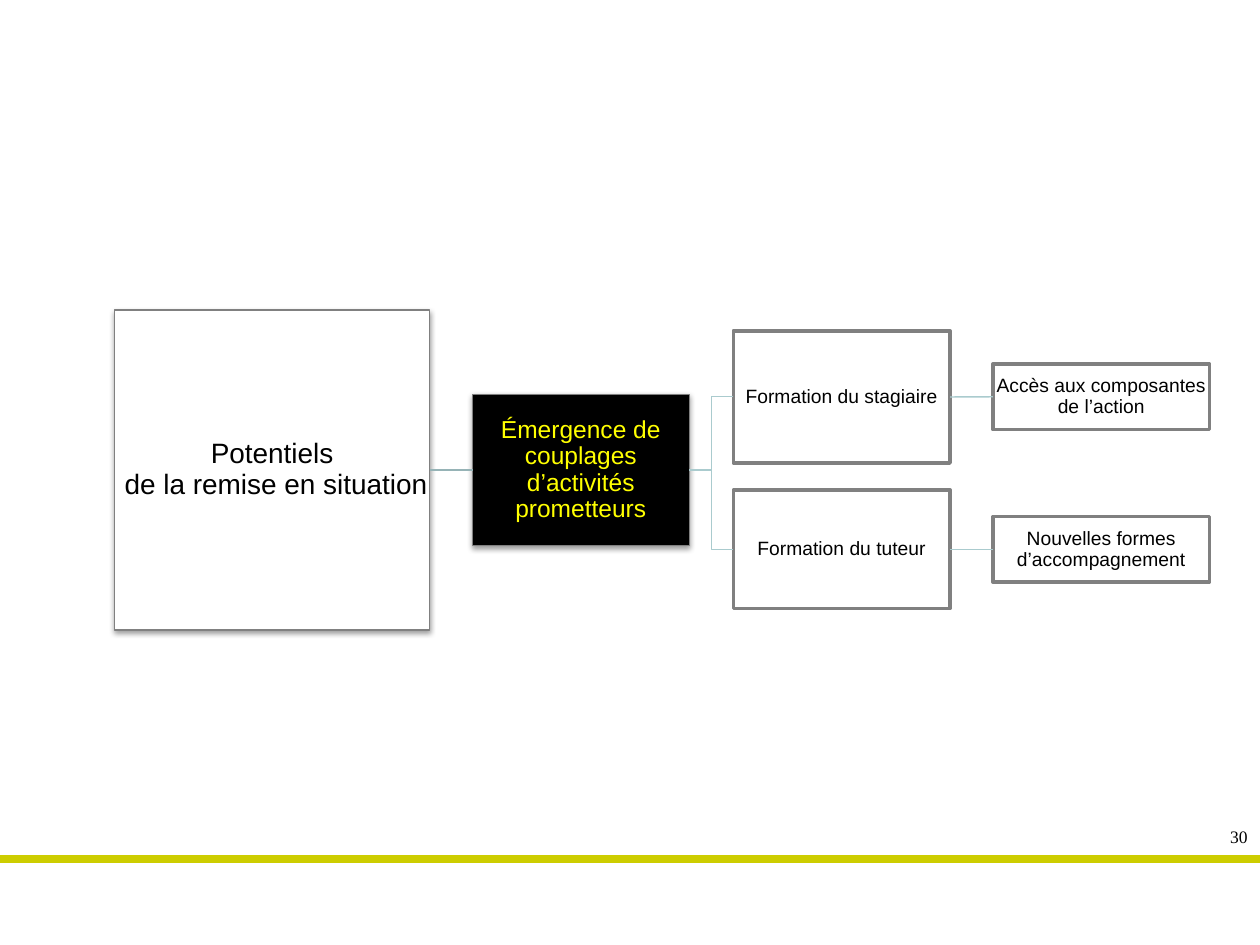
from lxml import etree
from pptx import Presentation
from pptx.dml.color import RGBColor
from pptx.enum.shapes import MSO_CONNECTOR, MSO_SHAPE
from pptx.enum.text import MSO_ANCHOR, PP_ALIGN
from pptx.oxml import parse_xml
from pptx.oxml.ns import nsdecls, qn
from pptx.util import Inches, Pt


def color(hex_string):
    return RGBColor.from_string(hex_string)


def style_connector(connector, line_color, width):
    connector.line.color.rgb = color(line_color)
    connector.line.width = Pt(width)
    etree.SubElement(connector._element.spPr, qn("a:effectLst"))


prs = Presentation()
prs.slide_width, prs.slide_height = Inches(10), Inches(7.5)
slide = prs.slides.add_slide(prs.slide_layouts[6])

footer_rule = slide.shapes.add_connector(
    MSO_CONNECTOR.STRAIGHT, Inches(10), Inches(6.82), Inches(0), Inches(6.82))
style_connector(footer_rule, "CDCD00", 4.5)

page_number = slide.shapes.add_textbox(Inches(9.49), Inches(6.51), Inches(0.51), Inches(0.27))
page_number.text_frame.word_wrap = True
page_number.text_frame.text = "30"
number_line = page_number.text_frame.paragraphs[0]
number_line.alignment = PP_ALIGN.RIGHT
number_line.font.name = "Times New Roman"
number_line.font.size = Pt(10)
number_line.font.color.rgb = color("000000")

SHADOW = (
    f'<a:effectLst {nsdecls("a")}>'
    '<a:outerShdw blurRad="40000" dist="20000" dir="5400000" rotWithShape="0">'
    '<a:srgbClr val="000000"><a:alpha val="38000"/></a:srgbClr>'
    '</a:outerShdw></a:effectLst>')

MIDDLE, UPPER, LOWER = 3.73, 3.15, 4.36
nodes = [
    ("Potentiels\v de la remise en situation", 0.91, MIDDLE, 2.5, 2.54, 16, "FFFFFF", "000000", 0.75),
    ("Émergence de couplages d’activités prometteurs", 3.75, MIDDLE, 1.72, 1.2, 14, "000000", "FFFF00", 0.75),
    ("Formation du stagiaire", 5.82, UPPER, 1.72, 1.05, 11, "FFFFFF", "000000", 2),
    ("Accès aux composantes de l’action", 7.88, UPPER, 1.72, 0.52, 11, "FFFFFF", "000000", 2),
    ("Formation du tuteur", 5.82, LOWER, 1.72, 0.94, 11, "FFFFFF", "000000", 2),
    ("Nouvelles formes d’accompagnement", 7.88, LOWER, 1.72, 0.52, 11, "FFFFFF", "000000", 2),
]

boxes = []
for text, left, center, width, height, size, fill, ink, border in nodes:
    box = slide.shapes.add_shape(
        MSO_SHAPE.RECTANGLE, Inches(left), Inches(center - height / 2), Inches(width), Inches(height))
    box.fill.solid()
    box.fill.fore_color.rgb = color(fill)
    box.line.color.rgb = color("808080")
    box.line.width = Pt(border)
    if border < 1:
        box._element.spPr.append(parse_xml(SHADOW))
    else:
        box.shadow.inherit = False
    frame = box.text_frame
    frame.word_wrap = True
    frame.vertical_anchor = MSO_ANCHOR.MIDDLE
    frame.margin_left = frame.margin_right = frame.margin_top = frame.margin_bottom = Inches(0.01)
    frame.text = text
    label = frame.paragraphs[0]
    label.alignment = PP_ALIGN.CENTER
    label.line_spacing = 0.9
    label.font.name = "Arial"
    label.font.size = Pt(size)
    label.font.color.rgb = color(ink)
    boxes.append(box)

RIGHT_SIDE, LEFT_SIDE = 3, 1
links = [
    (0, 1, MSO_CONNECTOR.STRAIGHT, "96B3B6"),
    (1, 2, MSO_CONNECTOR.ELBOW, "AACBCE"),
    (2, 3, MSO_CONNECTOR.STRAIGHT, "AACBCE"),
    (1, 4, MSO_CONNECTOR.ELBOW, "AACBCE"),
    (4, 5, MSO_CONNECTOR.STRAIGHT, "AACBCE"),
]
for parent, child, kind, line_color in links:
    link = slide.shapes.add_connector(kind, 0, 0, 0, 0)
    link.begin_connect(boxes[parent], RIGHT_SIDE)
    link.end_connect(boxes[child], LEFT_SIDE)
    style_connector(link, line_color, 0.75)

prs.save("out.pptx")
